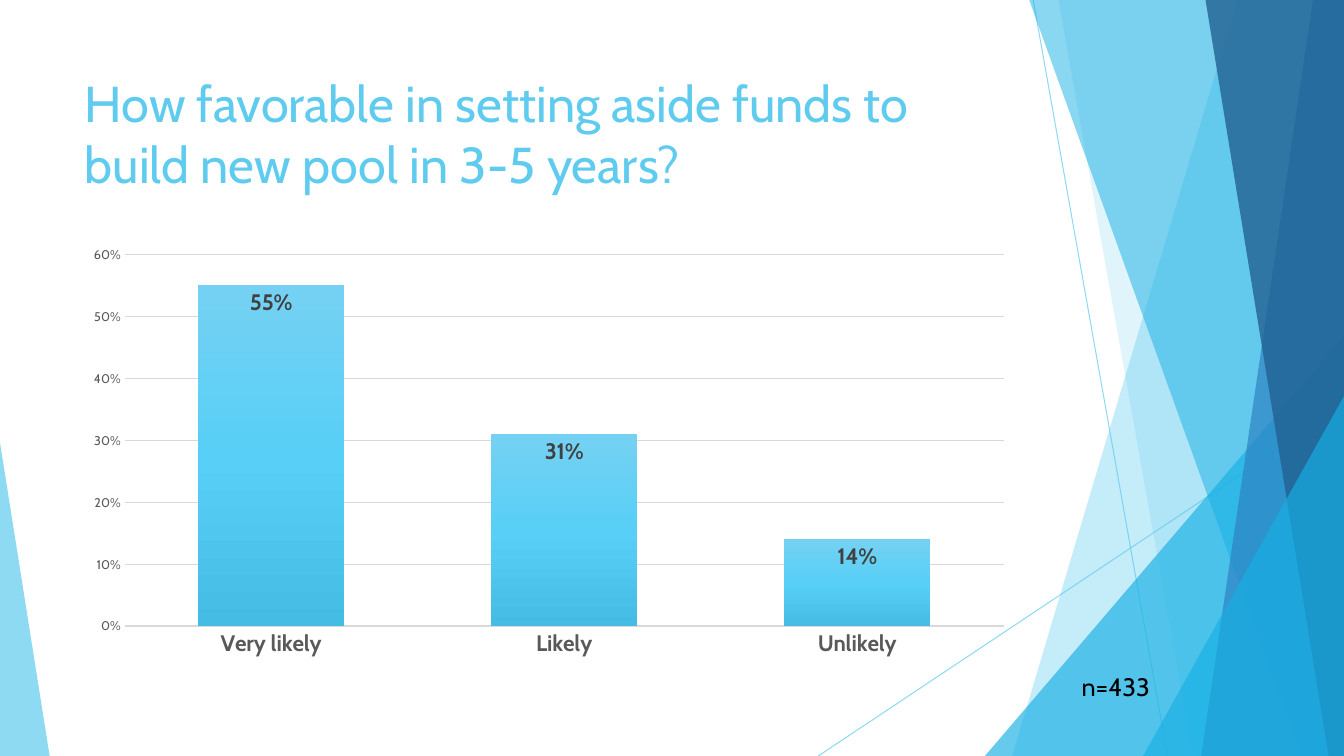
from lxml import etree
from pptx import Presentation
from pptx.chart.data import CategoryChartData
from pptx.dml.color import RGBColor
from pptx.enum import chart as ch, shapes, text
from pptx.oxml.ns import qn
from pptx.util import Pt

WIDTH, HEIGHT, TOP = 960, 540, -0.6
SKY, CYAN, BLUE, NAVY, GRID = "5FCBEF", "17B0E4", "2E83C3", "226292", "D9D9D9"


def style_font(font, size, color, bold=False):
    font.name, font.size, font.bold = "Cabin", Pt(size), bold
    font.color.rgb = RGBColor.from_string(color)


def paint(fmt, color, opacity=100):
    """Give a fill a solid colour with an opacity in percent."""
    fmt.solid()
    fmt.fore_color.rgb = RGBColor.from_string(color)
    if opacity < 100:
        clr = fmt._xPr.find(qn("a:solidFill"))[0]
        etree.SubElement(clr, qn("a:alpha"), val=str(opacity * 1000))


prs = Presentation()
prs.slide_width, prs.slide_height = Pt(WIDTH), Pt(HEIGHT)
s = prs.slides.add_slide(prs.slide_layouts[6])

# Thin diagonal lines
for x1, y1, x2, y2 in [(738, 0, 834, HEIGHT), (WIDTH, 290, 584.5, HEIGHT)]:
    line = s.shapes.add_connector(
        shapes.MSO_CONNECTOR.STRAIGHT, Pt(x1), Pt(y1), Pt(x2), Pt(y2))
    line.line.width = Pt(0.75)
    paint(line.line.fill, SKY, 70)
    etree.SubElement(line._element.spPr, qn("a:effectLst"))

# Bands run from (top x, bottom x) to the right edge;
# triangles have left, top, width, height and apex position
facets = [
    ("band", (884, 723), SKY, 36),
    ("band", (756, 852), SKY, 20),
    ("triangle", (703.5, 240, 256.5, 300, 1), CYAN, 66),
    ("band", (735, 929.5), CYAN, 50),
    ("band", (938, 858), BLUE, 70),
    ("band", (861, 949), NAVY, 80),
    ("triangle", (816.5, 283, 143.5, 257, 1), CYAN, 66),
    ("triangle", (0, 316, 35.5, 224, 0), SKY, 70),
]
for kind, geometry, color, opacity in facets:
    if kind == "band":
        top_x, bottom_x = geometry
        outline = s.shapes.build_freeform(Pt(top_x), Pt(TOP))
        corners = [(WIDTH, TOP), (WIDTH, HEIGHT), (bottom_x, HEIGHT)]
        outline.add_line_segments([(Pt(x), Pt(y)) for x, y in corners])
        sp = outline.convert_to_shape()
    else:
        *box, apex = geometry
        sp = s.shapes.add_shape(
            shapes.MSO_SHAPE.ISOSCELES_TRIANGLE, *[Pt(v) for v in box])
        sp.adjustments[0] = apex
    sp.shadow.inherit = False
    sp.line.fill.background()
    paint(sp.fill, color, opacity)

# Title and sample size
question = "How favorable in setting aside funds to build new pool in 3-5 years?"
for words, box, size, color in [
    (question, (53.5, 48, 677, 104), 36, SKY),
    ("n=433", (765.5, 476, 95, 29), 18, "000000"),
]:
    tf = s.shapes.add_textbox(*[Pt(v) for v in box]).text_frame
    tf.word_wrap = True
    tf.vertical_anchor = text.MSO_ANCHOR.TOP
    tf.text = words
    style_font(tf.paragraphs[0].runs[0].font, size, color)

# Column chart
data = CategoryChartData(number_format="0%")
data.categories = ["Very likely", "Likely", "Unlikely"]
data.add_series("Series 1", [0.55, 0.31, 0.14])
chart = s.shapes.add_chart(
    ch.XL_CHART_TYPE.COLUMN_CLUSTERED,
    Pt(53.5), Pt(170), Pt(677), Pt(305), data).chart
chart.has_legend = chart.has_title = False
style_font(chart.font, 10, "000000")

cat_axis, val_axis = chart.category_axis, chart.value_axis
for axis in (cat_axis, val_axis):
    axis.major_tick_mark = axis.minor_tick_mark = ch.XL_TICK_MARK.NONE
style_font(cat_axis.tick_labels.font, 16, "595959", bold=True)
style_font(val_axis.tick_labels.font, 9, "595959")
cat_axis.format.line.width = Pt(1)
paint(cat_axis.format.line.fill, GRID)
val_axis.format.line.fill.background()
val_axis.minimum_scale, val_axis.maximum_scale, val_axis.major_unit = 0, 0.6, 0.1
val_axis.tick_labels.number_format = "0%"
val_axis.tick_labels.number_format_is_linked = False
val_axis.has_major_gridlines = True
val_axis.major_gridlines.format.line.width = Pt(0.75)
paint(val_axis.major_gridlines.format.line.fill, GRID)

plot = chart.plots[0]
plot.gap_width, plot.overlap, plot.vary_by_categories = 100, -24, False
columns = plot.series[0]
labels = columns.data_labels
labels.show_value = True
labels.position = ch.XL_LABEL_POSITION.INSIDE_END
labels.number_format, labels.number_format_is_linked = "0%", False
style_font(labels.font, 16, "404040", bold=True)

# Three-stop vertical gradient for the columns
columns.format.fill.gradient()
grad = columns.format.fill._xPr.find(qn("a:gradFill"))
for child in list(grad):
    grad.remove(child)
stops = etree.SubElement(grad, qn("a:gsLst"))
for percent, color in [(0, "75D1F3"), (50, "58CFF6"), (100, "45BCE3")]:
    stop = etree.SubElement(stops, qn("a:gs"), pos=str(percent * 1000))
    etree.SubElement(stop, qn("a:srgbClr"), val=color)
etree.SubElement(grad, qn("a:lin"), ang="5400000", scaled="0")

prs.save("out.pptx")
